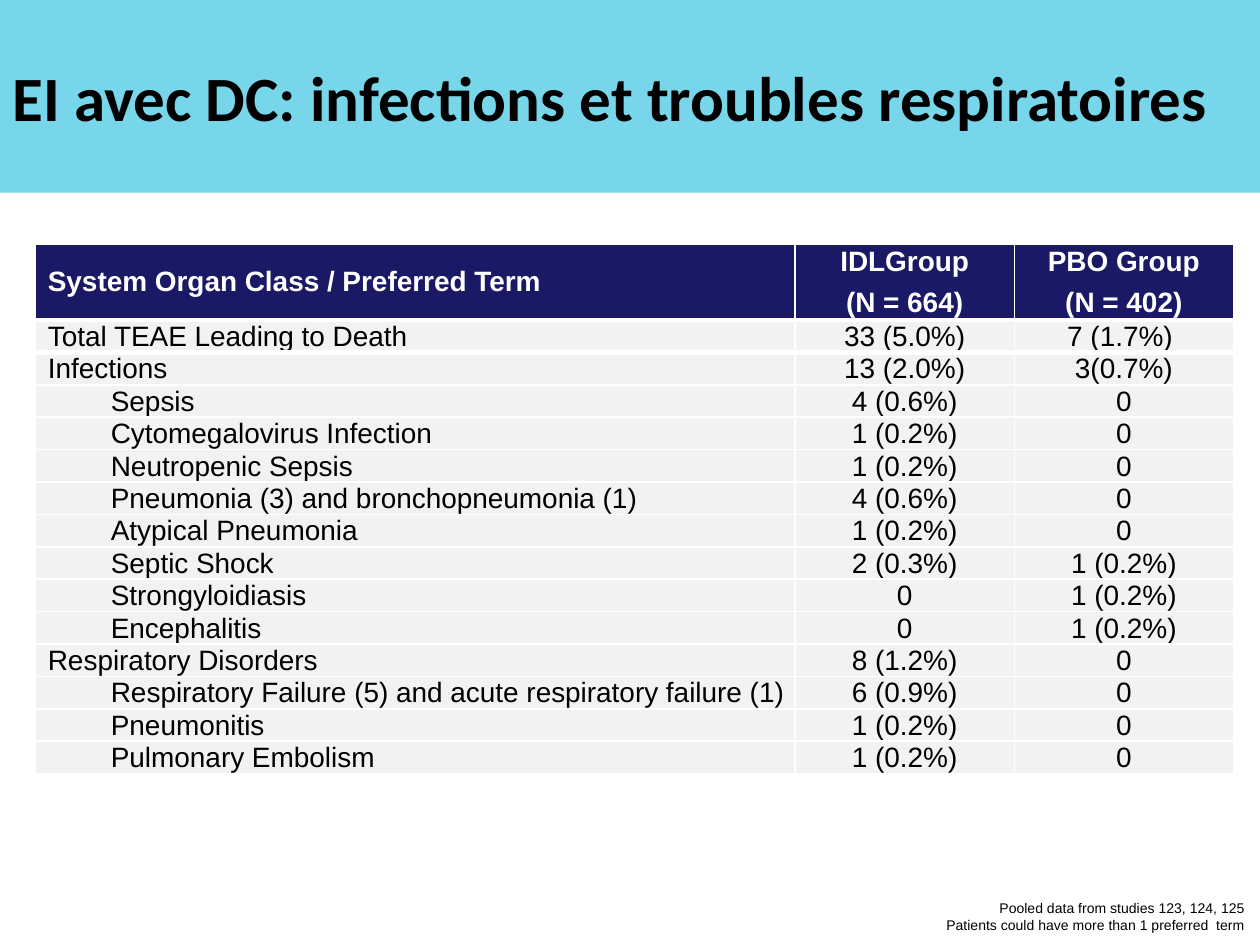
"""Build the slide on adverse events leading to death: infections and respiratory disorders."""
import dataclasses

import lxml.etree
import pptx
import pptx.dml.color
import pptx.enum.shapes
import pptx.enum.text
import pptx.oxml.ns
import pptx.util

Inches = pptx.util.Inches
Pt = pptx.util.Pt
Align = pptx.enum.text.PP_ALIGN
Anchor = pptx.enum.text.MSO_ANCHOR

TITLE = "EI avec DC: infections et troubles respiratoires"
HEADER = ("System Organ Class / Preferred Term", "IDLGroup\n(N = 664)", "PBO Group\n(N = 402)")
CLASSES = [
    (("Total TEAE Leading to Death", "33 (5.0%)", "7 (1.7%) "), []),
    (("Infections", "13 (2.0%)", "3(0.7%)"), [
        ("Sepsis", "4 (0.6%)", "0"),
        ("Cytomegalovirus Infection", "1 (0.2%)", "0"),
        ("Neutropenic Sepsis", "1 (0.2%)", "0"),
        ("Pneumonia (3) and bronchopneumonia (1)", "4 (0.6%)", "0"),
        ("Atypical Pneumonia", "1 (0.2%)", "0"),
        ("Septic Shock", "2 (0.3%)", "1 (0.2%)"),
        ("Strongyloidiasis", "0", "1 (0.2%)"),
        ("Encephalitis", "0", "1 (0.2%)"),
    ]),
    (("Respiratory Disorders", "8 (1.2%)", "0"), [
        ("Respiratory Failure (5) and acute respiratory failure (1)", "6 (0.9%)", "0"),
        ("Pneumonitis", "1 (0.2%)", "0"),
        ("Pulmonary Embolism", "1 (0.2%)", "0"),
    ]),
]
FOOTNOTE = "Pooled data from studies 123, 124, 125\nPatients could have more than 1 preferred  term"
COLUMN_WIDTHS = (6.03, 1.74, 1.74)
HEADER_HEIGHT, ROW_HEIGHT = 0.6, 0.21


@dataclasses.dataclass(frozen=True)
class Theme:
    """Colours, fonts and type sizes."""
    banner: str = "78D6EA"
    header: str = "191966"
    body: str = "F2F2F2"
    white: str = "FFFFFF"
    black: str = "000000"
    title_font: str = "Calibri"
    text_font: str = "Arial"
    title_size: int = 36
    table_size: int = 16
    note_size: int = 8
    thin: int = 1
    thick: int = 3


THEME = Theme()


def paint(target, colour):
    """Give a shape or cell a solid fill."""
    target.fill.solid()
    target.fill.fore_color.rgb = pptx.dml.color.RGBColor.from_string(colour)


def write(frame, text, size, colour, font=THEME.text_font, bold=False, align=Align.LEFT):
    """Set the text of a frame and format all of its runs."""
    frame.text = text
    for para in frame.paragraphs:
        para.alignment = align
        for span in para.runs:
            span.font.name = font
            span.font.size = Pt(size)
            span.font.bold = bold
            span.font.color.rgb = pptx.dml.color.RGBColor.from_string(colour)


def add_borders(cell, top, bottom):
    """Draw white borders round a cell."""
    properties = cell._tc.get_or_add_tcPr()
    qn = pptx.oxml.ns.qn
    sides = {"L": THEME.thin, "R": THEME.thin, "T": top, "B": bottom}
    for side, width in sides.items():
        line = lxml.etree.SubElement(properties, qn(f"a:ln{side}"), w=str(Pt(width)))
        fill = lxml.etree.SubElement(line, qn("a:solidFill"))
        lxml.etree.SubElement(fill, qn("a:srgbClr"), val=THEME.white)


def set_margins(target, left, top, right, bottom):
    """Set the four text margins in inches."""
    target.margin_left, target.margin_top = Inches(left), Inches(top)
    target.margin_right, target.margin_bottom = Inches(right), Inches(bottom)


def add_title(page):
    """Add the banner with the title."""
    box = page.shapes.add_shape(
        pptx.enum.shapes.MSO_SHAPE.RECTANGLE, 0, 0, Inches(10), Inches(1.53))
    box.shadow.inherit = False
    box.line.fill.background()
    paint(box, THEME.banner)
    box.text_frame.word_wrap = True
    box.text_frame.vertical_anchor = Anchor.MIDDLE
    write(box.text_frame, TITLE, THEME.title_size, THEME.black, THEME.title_font, True)


def fill_cell(cell, text, row, column, indented):
    """Write and style one table cell."""
    is_header = row == 0
    add_borders(cell, THEME.thick if row in (1, 2) else THEME.thin,
                THEME.thick if row in (0, 1) else THEME.thin)
    paint(cell, THEME.header if is_header else THEME.body)
    cell.vertical_anchor = Anchor.MIDDLE
    side = 0.08 if is_header else 0.01
    top = 0 if is_header else 0.01
    set_margins(cell, 0.1 if column == 0 else side, top, side, 0)
    write(cell.text_frame, text, THEME.table_size, THEME.white if is_header else THEME.black,
          bold=is_header, align=Align.CENTER if column else Align.LEFT)
    for para in cell.text_frame.paragraphs:
        if is_header:
            para.space_before = para.space_after = Pt(3)
        elif indented and column == 0:
            para.level = 1
            para.space_before = Pt(3)
            properties = para._p.get_or_add_pPr()
            properties.set("marL", str(Inches(0.5)))
            properties.set("indent", "0")


def add_event_table(page):
    """Add the table of organ classes and their preferred terms."""
    rows = [(HEADER, False)]
    for organ_class, terms in CLASSES:
        rows.append((organ_class, False))
        rows.extend((term, True) for term in terms)
    frame = page.shapes.add_table(
        len(rows), len(COLUMN_WIDTHS), Inches(0.28), Inches(1.94),
        Inches(sum(COLUMN_WIDTHS)), Inches(4.5))
    table = frame.table
    table.horz_banding = False
    for column, width in zip(table.columns, COLUMN_WIDTHS):
        column.width = Inches(width)
    for index, (values, indented) in enumerate(rows):
        table.rows[index].height = Inches(ROW_HEIGHT if index else HEADER_HEIGHT)
        for column, text in enumerate(values):
            fill_cell(table.cell(index, column), text, index, column, indented)


def add_footnote(page):
    """Add the note at the bottom right."""
    box = page.shapes.add_textbox(Inches(7.38), Inches(7.09), Inches(2.6), Inches(0.37))
    box.text_frame.word_wrap = False
    write(box.text_frame, FOOTNOTE, THEME.note_size, THEME.black, align=Align.RIGHT)


def main():
    """Build and save the deck."""
    deck = pptx.Presentation()
    deck.slide_width, deck.slide_height = Inches(10), Inches(7.5)
    page = deck.slides.add_slide(deck.slide_layouts[6])
    add_title(page)
    add_event_table(page)
    add_footnote(page)
    deck.save("out.pptx")


if __name__ == "__main__":
    main()
